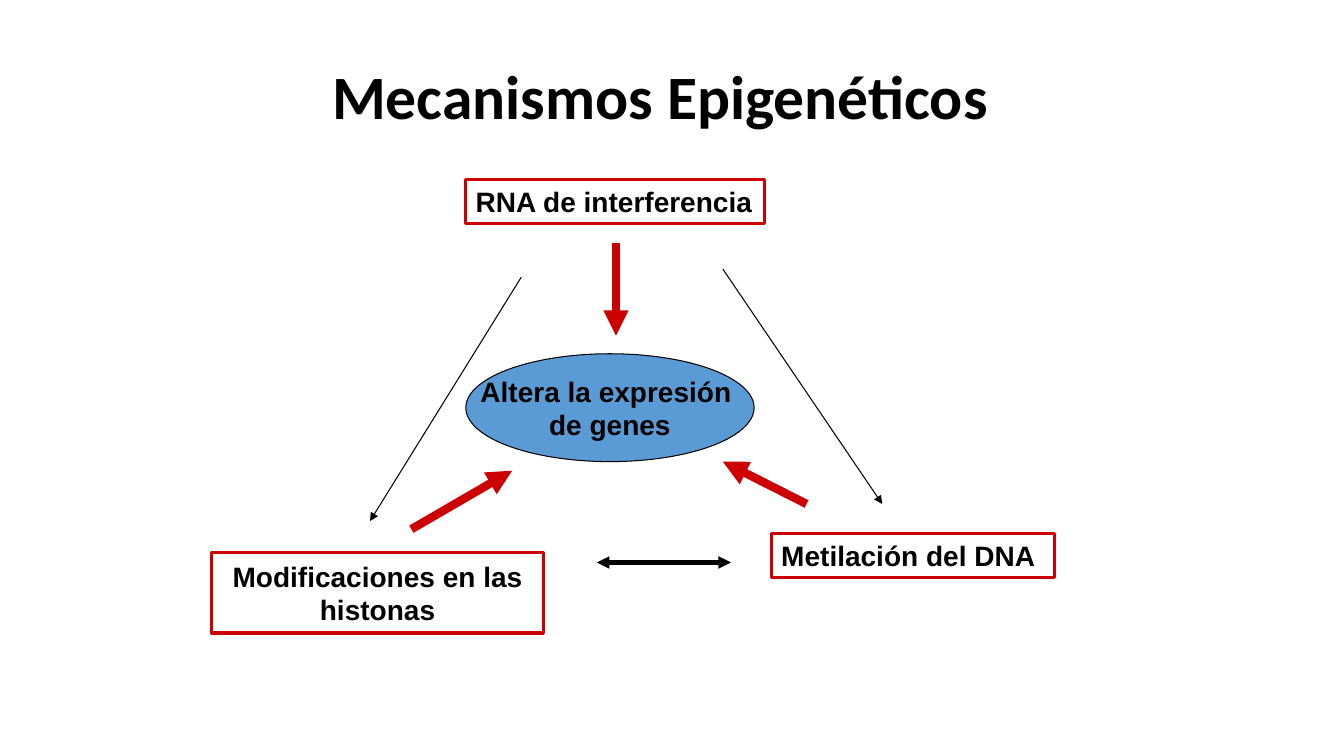
"""Builds the slide on epigenetic mechanisms."""
from lxml import etree
from pptx import Presentation
from pptx.dml.color import RGBColor
from pptx.enum.shapes import MSO_CONNECTOR, MSO_SHAPE
from pptx.enum.text import MSO_ANCHOR, PP_ALIGN
from pptx.oxml.ns import qn
from pptx.util import Pt

PX = 9144
STRAIGHT = MSO_CONNECTOR.STRAIGHT
RECT, OVAL = MSO_SHAPE.RECTANGLE, MSO_SHAPE.OVAL
MIDDLE = MSO_ANCHOR.MIDDLE
LEFT, CENTER = PP_ALIGN.LEFT, PP_ALIGN.CENTER

COLORS = {"black": "000000", "red": "CC0000", "blue": "5B9BD5"}

TITLE = ("Mecanismos Epigenéticos", (241, 36, 828, 125))
NODES = [
    (OVAL, (462, 351, 286, 107), ["Altera la expresión ", "de genes"],
     "blue", "black", 0.75, CENTER, False),
    (RECT, (462, 178, 296, 44), ["RNA de interferencia"],
     None, "red", 2.25, LEFT, False),
    (RECT, (210, 548, 329, 80), ["Modificaciones en las", "histonas"],
     None, "red", 2.25, CENTER, True),
    (RECT, (765, 529, 281, 44), ["Metilación del DNA"],
     None, "red", 2.25, LEFT, True),
]
ARROWS = [
    ((800, 500), (717, 458), "red", 6, ["tailEnd"]),
    ((408, 525), (508, 467), "red", 6, ["tailEnd"]),
    ((611, 241), (611, 333), "red", 6, ["tailEnd"]),
    ((592, 558), (725, 558), "black", 3, ["headEnd", "tailEnd"]),
    ((517, 275), (367, 517), "black", 0.75, ["tailEnd"]),
    ((717, 267), (875, 500), "black", 0.75, ["tailEnd"]),
]


def emu(lengths):
    return [n * PX for n in lengths]


def rgb(name):
    return RGBColor.from_string(COLORS[name])


def write(sp, lines, size, font, align, wrap=True, spacing=None):
    tf = sp.text_frame
    tf.word_wrap = wrap
    tf.vertical_anchor = MIDDLE
    for i, line in enumerate(lines):
        p = tf.add_paragraph() if i else tf.paragraphs[0]
        p.alignment = align
        p.line_spacing = spacing
        r = p.add_run()
        r.text = line
        r.font.size = Pt(size)
        r.font.name = font
        r.font.bold = True
        r.font.color.rgb = rgb("black")


def add_node(s, kind, box, lines, fill, line, width, align, wrap):
    sp = s.shapes.add_shape(kind, *emu(box))
    sp.shadow.inherit = False
    if fill:
        sp.fill.solid()
        sp.fill.fore_color.rgb = rgb(fill)
    else:
        sp.fill.background()
    sp.line.color.rgb = rgb(line)
    sp.line.width = Pt(width)
    write(sp, lines, 20, "Arial", align, wrap)


def add_arrow(s, start, end, color, width, ends):
    cx = s.shapes.add_connector(STRAIGHT, *emu(start + end))
    cx.line.color.rgb = rgb(color)
    cx.line.width = Pt(width)
    ln = cx.line._get_or_add_ln()
    for tag in ends:
        etree.SubElement(ln, qn("a:" + tag), type="triangle")
    etree.SubElement(cx._element.spPr, qn("a:effectLst"))


def main():
    prs = Presentation()
    prs.slide_width, prs.slide_height = emu((1333, 750))
    s = prs.slides.add_slide(prs.slide_layouts[6])
    text, box = TITLE
    write(s.shapes.add_textbox(*emu(box)), [text], 44, "Calibri", CENTER, spacing=0.9)
    for node in NODES:
        add_node(s, *node)
    for arrow in ARROWS:
        add_arrow(s, *arrow)
    prs.save("out.pptx")


if __name__ == "__main__":
    main()
